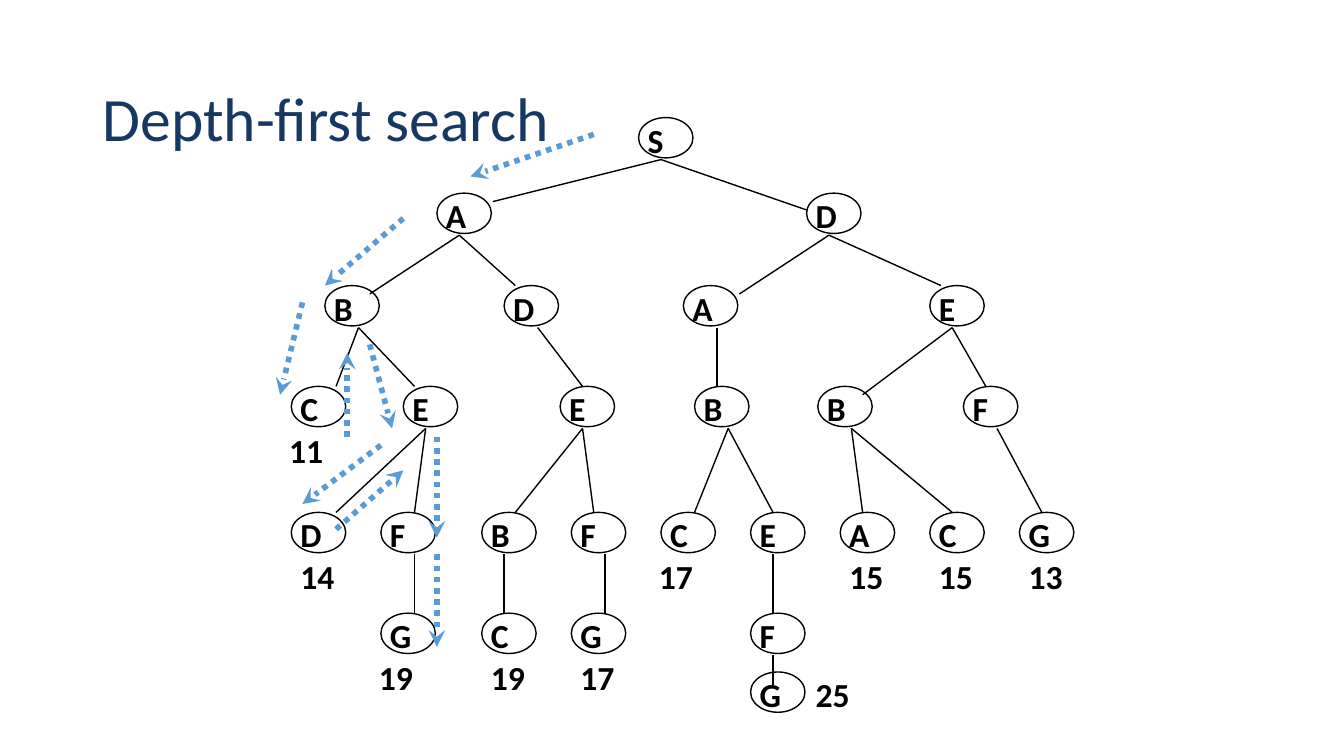
from lxml.etree import SubElement
from pptx import Presentation
from pptx.dml.color import RGBColor
from pptx.enum.dml import MSO_LINE_DASH_STYLE as DASH
from pptx.enum.shapes import MSO_CONNECTOR as CONNECTOR, MSO_SHAPE as SHAPE
from pptx.enum.text import MSO_ANCHOR as ANCHOR, MSO_AUTO_SIZE as AUTO_SIZE
from pptx.oxml.ns import qn
from pptx.util import Inches, Pt

COLORS = {"title": "163964", "ink": "000000", "path": "5B9BD5"}
FONT = "Calibri"
COL, ROW = 1 / 9, 1 / 12  # grid steps in inches
LEVEL_ROWS = [14, 23, 34, 46, 61, 73, 80]
NODE_W, NODE_H = 0.54, 0.4
BOTTOM = 5  # rows from the top of a node to its lower edge
LETTER_WIDTHS = {"S": 0.3, "A": 0.34, "B": 0.33, "C": 0.32, "D": 0.35,
                 "E": 0.31, "F": 0.29, "G": 0.35}
COST_WIDTH = 0.48

# Node: letter, column, (columns, rows) where its incoming edge ends,
#       column offset where outgoing edges start, children.
# Leaf: the last two are replaced by the cost and its (column, row) offset.
TREE = ("S", 57, None, 2, [
    ("A", 39, (5, 1), 2, [
        ("B", 29, (4, 1), 3, [
            ("C", 26, (4, 0), "11", (-1, BOTTOM)),
            ("E", 36, (1, 0), 2, [
                ("D", 26, (4, 0), "14", (0, BOTTOM)),
                ("F", 34, (3, 0), 3, [
                    ("G", 34, (3, 0), "19", (-1, BOTTOM))])])]),
        ("D", 45, (1, 0), 3, [
            ("E", 50, (2, 0), 2, [
                ("B", 43, (3, 0), 2, [
                    ("C", 43, (2, 0), "19", (0, BOTTOM))]),
                ("F", 51, (2, 0), 3, [
                    ("G", 51, (3, 0), "17", (0, BOTTOM))])])])]),
    ("D", 72, (0, 2), 2, [
        ("A", 61, (5, 1), 3, [
            ("B", 62, (2, 0), 3, [
                ("C", 59, (3, 0), "17", (-1, BOTTOM)),
                ("E", 67, (2, 0), 2, [
                    ("F", 67, (2, 0), 2, [
                        ("G", 67, (2, 1.6), "25", (5, 0))])])])]),
        ("E", 83, (1, 0), 2, [
            ("B", 73, (4, 1), 3, [
                ("A", 75, (2, 0), "15", (0, BOTTOM)),
                ("C", 83, (2, 0), "15", (0, BOTTOM))]),
            ("F", 86, (2, 0), 3, [
                ("G", 91, (2, 0), "13", (0, BOTTOM))])])])])

# Search steps as grid points: (column, row) from and to
STEPS = [((53, 16), (42, 21)), ((36, 26), (29, 34)), ((27, 36), (25, 47)),
         ((31, 52), (31, 42)), ((33, 41), (35, 51)), ((34, 53), (27, 60)),
         ((30, 63), (36, 56)), ((39, 52), (39, 64)), ((39, 66), (39, 77))]

prs = Presentation()
prs.slide_width, prs.slide_height = Inches(13.33), Inches(7.5)
slide = prs.slides.add_slide(prs.slide_layouts[6])


def color(name):
    return RGBColor.from_string(COLORS[name])


def grid(col, row):
    return Inches(col * COL), Inches(row * ROW)


def add_line(start, end, name="ink", width=1):
    line = slide.shapes.add_connector(CONNECTOR.STRAIGHT, *grid(*start), *grid(*end))
    line.line.color.rgb = color(name)
    line.line.width = Pt(width)
    SubElement(line._element.spPr, qn("a:effectLst"))
    return line


def add_step(start, end):
    """Dotted arrow along one move of the search."""
    arrow = add_line(start, end, "path", 4)
    arrow.line.dash_style = DASH.ROUND_DOT
    SubElement(arrow.line._get_or_add_ln(), qn("a:tailEnd"), type="stealth")


def add_text(text, left, top, width, height, size, name, spacing):
    box = slide.shapes.add_textbox(left, top, Inches(width), Inches(height))
    tf = box.text_frame
    p = tf.paragraphs[0]
    p.text = text
    p.line_spacing = spacing
    p.font.name, p.font.size = FONT, Pt(size)
    p.font.color.rgb = color(name)
    return tf


def add_label(text, col, row, width):
    left, top = grid(col, row)
    tf = add_text(text, left + Inches(0.02), top + Inches(0.05), width, NODE_H,
                  24, "ink", 0.85)
    tf.word_wrap = False
    tf.auto_size = AUTO_SIZE.SHAPE_TO_FIT_TEXT
    tf.margin_left = tf.margin_right = Inches(0.07)
    tf.margin_top = tf.margin_bottom = Inches(0.03)
    tf.paragraphs[0].font.bold = True


def add_node(node, level=0, origin=None):
    """Draw a node, the edge from its parent, and everything below it."""
    letter, col, entry, extra, rest = node
    row = LEVEL_ROWS[level]
    if origin:
        add_line(origin, (col + entry[0], row + entry[1]))
    oval = slide.shapes.add_shape(SHAPE.OVAL, *grid(col, row),
                                  Inches(NODE_W), Inches(NODE_H))
    oval.shadow.inherit = False
    oval.fill.background()
    oval.line.color.rgb = color("ink")
    oval.line.width = Pt(1)
    add_label(letter, col, row, LETTER_WIDTHS[letter])
    if isinstance(extra, str):
        add_label(extra, col + rest[0], row + rest[1], COST_WIDTH)
    else:
        for child in rest:
            add_node(child, level + 1, (col + extra, row + BOTTOM))


title = add_text("Depth-first search", Inches(0.92), Inches(0.56), 11.5, 1.29,
                 44, "title", 0.9)
title.word_wrap = True
title.vertical_anchor = ANCHOR.MIDDLE

add_node(TREE)
for start, end in STEPS:
    add_step(start, end)

prs.save("out.pptx")
